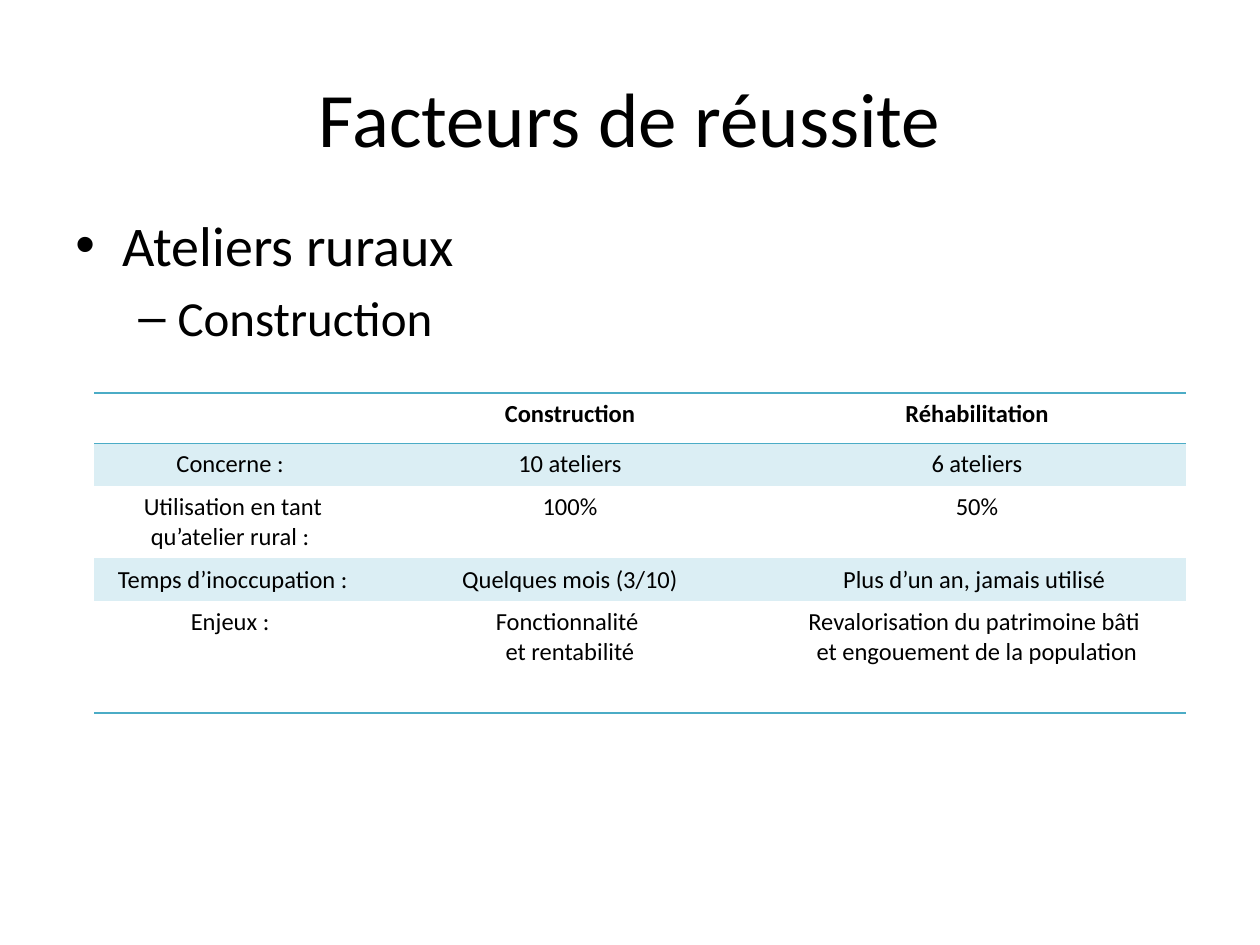
from lxml.etree import SubElement
from pptx import Presentation
from pptx.dml.color import RGBColor
from pptx.enum.text import MSO_ANCHOR, PP_ALIGN
from pptx.oxml import parse_xml
from pptx.oxml.ns import nsdecls, qn
from pptx.util import Cm, Pt

FONT = "Calibri"
COLORS = {"text": "000000", "rule": "4BACC6", "band": "DBEEF4"}
ROWS = [
    ["", "Construction", "Réhabilitation"],
    ["Concerne : ", "10 ateliers", "6 ateliers"],
    ["Utilisation en tant qu’atelier rural : ", "100%", "50%"],
    ["Temps d’inoccupation :", "Quelques mois (3/10)", "Plus d’un an, jamais utilisé "],
    ["Enjeux : ", "Fonctionnalité \net rentabilité",
     "Revalorisation du patrimoine bâti \net engouement de la population"],
]
COL_WIDTHS = [5.59, 8, 8.41]
ROW_HEIGHTS = [0.86, 0.86, 1.46, 0.86, 2.26]
BULLETS = [("Ateliers ruraux", 32, "•", 0.95, 0.95, 0),
           ("Construction", 28, "–", 2.06, 0.79, 5.6)]
NO_STYLE = "{2D5ABB26-0587-4C30-8999-92F81FD0307C}"


def style(p, size, bold=False, align=PP_ALIGN.LEFT):
    """Format the paragraph and all its runs."""
    p.alignment = align
    for r in p.runs:
        r.font.name = FONT
        r.font.size = Pt(size)
        r.font.bold = bold
        r.font.color.rgb = RGBColor.from_string(COLORS["text"])


def add_text_frame(slide, left, top, width, height):
    """Add a wrapping text box and return its text frame."""
    sp = slide.shapes.add_textbox(Cm(left), Cm(top), Cm(width), Cm(height))
    tf = sp.text_frame
    tf.word_wrap = True
    return tf


def add_title(slide, left, top, width, height):
    """Place the centred slide title in the box."""
    tf = add_text_frame(slide, left, top, width, height)
    tf.vertical_anchor = MSO_ANCHOR.MIDDLE
    tf.text = "Facteurs de réussite"
    style(tf.paragraphs[0], 44, align=PP_ALIGN.CENTER)


def add_bullets(slide, left, top, width, height):
    """Place the two-level bullet list in the box."""
    tf = add_text_frame(slide, left, top, width, height)
    tf.text = "\n".join(item[0] for item in BULLETS)
    for level, (p, item) in enumerate(zip(tf.paragraphs, BULLETS)):
        _, size, char, margin, hanging, before = item
        p.level = level
        p.space_before = Pt(before)
        pPr = p._p.get_or_add_pPr()
        pPr.set("marL", str(Cm(margin)))
        pPr.set("indent", str(-Cm(hanging)))
        SubElement(pPr, qn("a:buFont"), typeface="Arial")
        SubElement(pPr, qn("a:buChar"), char=char)
        style(p, size)


def add_rules(cell, sides):
    """Draw thin horizontal rules on the named sides of the cell."""
    tcPr = cell._tc.get_or_add_tcPr()
    for i, side in enumerate(sides):
        tcPr.insert(i, parse_xml(
            f'<a:ln{side} {nsdecls("a")} w="12700"><a:solidFill>'
            f'<a:srgbClr val="{COLORS["rule"]}"/></a:solidFill></a:ln{side}>'))


def add_comparison(slide, left, top):
    """Place the banded comparison table at the given corner."""
    frame = slide.shapes.add_table(
        len(ROWS), len(COL_WIDTHS), Cm(left), Cm(top),
        Cm(sum(COL_WIDTHS)), Cm(sum(ROW_HEIGHTS)))
    table = frame.table
    table._tbl.tblPr.find(qn("a:tableStyleId")).text = NO_STYLE
    for col, width in zip(table.columns, COL_WIDTHS):
        col.width = Cm(width)
    for row, height in zip(table.rows, ROW_HEIGHTS):
        row.height = Cm(height)
    rules = {0: "TB", len(ROWS) - 1: "B"}
    for i, texts in enumerate(ROWS):
        for j, text in enumerate(texts):
            cell = table.cell(i, j)
            cell.text = text
            for p in cell.text_frame.paragraphs:
                style(p, 14, bold=i == 0, align=PP_ALIGN.CENTER)
            if i % 2:
                cell.fill.solid()
                cell.fill.fore_color.rgb = RGBColor.from_string(COLORS["band"])
            else:
                cell.fill.background()
            add_rules(cell, rules.get(i, ""))


def main():
    """Build the slide and save it."""
    prs = Presentation()
    prs.slide_width, prs.slide_height = Cm(25.4), Cm(19.05)
    slide = prs.slides.add_slide(prs.slide_layouts[6])
    add_title(slide, 1.27, 0.76, 22.86, 3.18)
    add_bullets(slide, 1.27, 4.11, 22.86, 14.61)
    add_comparison(slide, 1.9, 7.92)
    prs.save("out.pptx")


if __name__ == "__main__":
    main()
